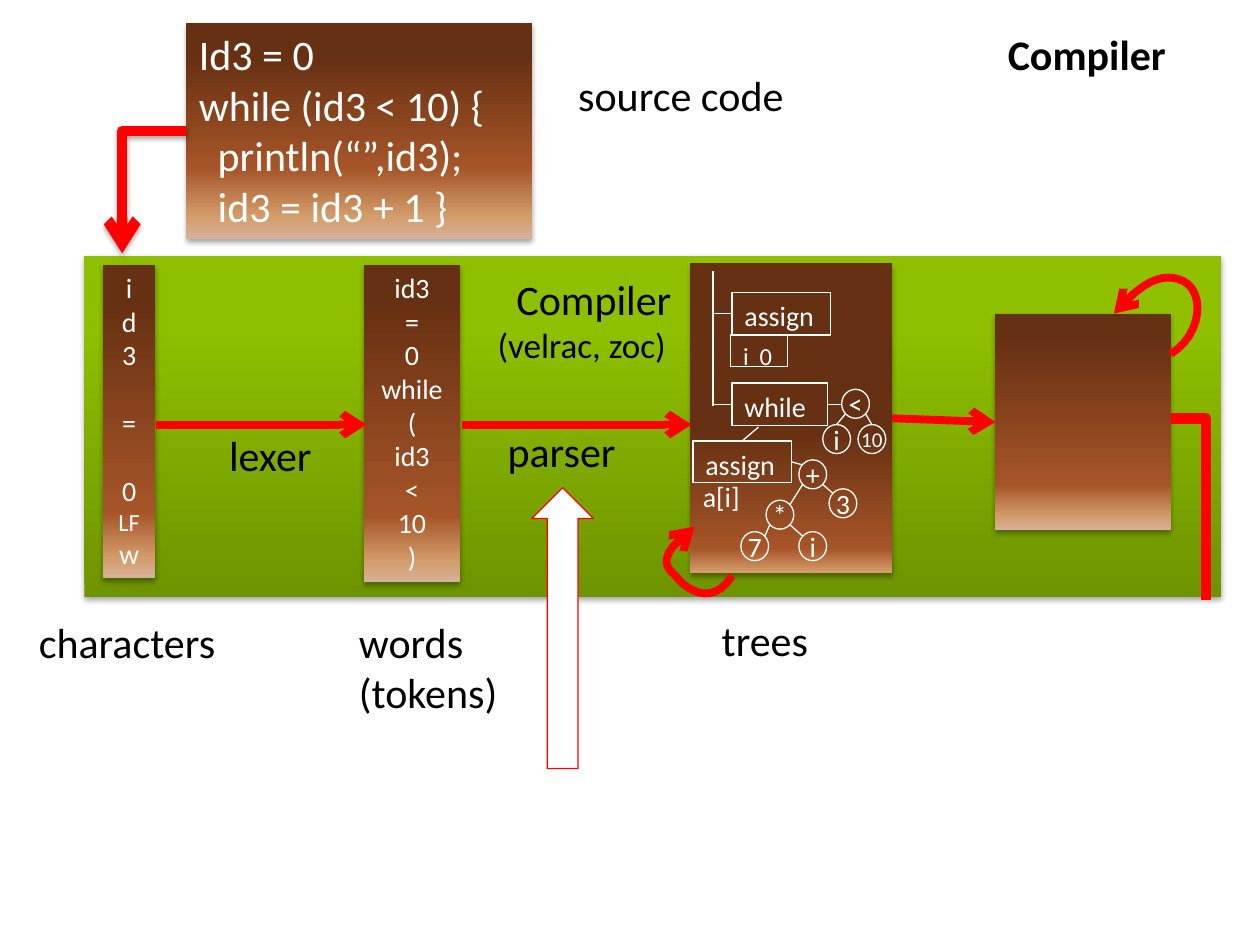
from dataclasses import dataclass

from lxml.etree import SubElement
from pptx import Presentation
from pptx.dml.color import RGBColor
from pptx.enum.shapes import MSO_CONNECTOR as LINK, MSO_SHAPE as SHAPE
from pptx.enum.text import MSO_ANCHOR as ANCHOR, MSO_AUTO_SIZE as FIT, PP_ALIGN as ALIGN
from pptx.oxml.ns import qn
from pptx.util import Inches, Pt

COLUMNS, ROWS = 100, 75
BLACK, WHITE, RED = "000000", "FFFFFF", "FF0000"
GREEN = [(0, "6E9400"), (80, "8FC000"), (100, "90C100")]
LEFT, RIGHT, TOP = 1, 3, 0
NODE_W, NODE_H, NODE_DIAGONAL = 2.2, 2.3, 0.8
STACKED_REACH = 1.8
BLANK_LINE = 19.5


@dataclass
class Line:
    text: str
    size: int = 0
    indent: float = 0
    before: float = 0
    spacing: int = 0


def grid(cells):
    """Length of a number of grid cells, each a tenth of an inch."""
    return Inches(cells / 10)


def rgb(hex_color):
    return RGBColor.from_string(hex_color)


def brown(*stops):
    return list(zip(stops, ("D6B19C", "D49E6C", "A65528", "663012")))


def write(frame, lines, size, color, align=ALIGN.LEFT, bold=False):
    for number, line in enumerate(lines):
        line = line if isinstance(line, Line) else Line(line)
        paragraph = frame.add_paragraph() if number else frame.paragraphs[0]
        paragraph.alignment = align
        if line.before:
            paragraph.space_before = Pt(line.before)
        if line.indent:
            paragraph._p.get_or_add_pPr().set("marL", str(grid(line.indent)))
        run = paragraph.add_run()
        run.text = line.text
        run.font.name = "Calibri"
        run.font.size = Pt(line.size or size)
        run.font.bold = bold
        run.font.color.rgb = rgb(color)
        if line.spacing:
            run._r.get_or_add_rPr().set("spc", str(line.spacing))


def cast_shadow(effects):
    shadow = SubElement(effects, qn("a:outerShdw"), blurRad=str(Pt(3.1)),
                        dist=str(Pt(1.8)), dir="5400000", rotWithShape="0")
    black = SubElement(shadow, qn("a:srgbClr"), val=BLACK)
    SubElement(black, qn("a:alpha"), val="35000")


def add_arrowhead(line):
    SubElement(line._get_or_add_ln(), qn("a:tailEnd"), type="arrow")


def add_figure(slide, kind, box, fill=None, outline=None):
    figure = slide.shapes.add_shape(kind, *map(grid, box))
    figure.shadow.inherit = False
    figure.text_frame.vertical_anchor = ANCHOR.TOP
    if fill:
        figure.fill.solid()
        figure.fill.fore_color.rgb = rgb(fill)
    else:
        figure.fill.background()
    if outline:
        figure.line.color.rgb = rgb(outline)
        figure.line.width = Pt(0.75)
    else:
        figure.line.fill.background()
    return figure


def add_panel(slide, box, stops):
    """Shadowed rectangle whose gradient runs from bottom to top."""
    panel = add_figure(slide, SHAPE.RECTANGLE, box)
    panel.fill.gradient()
    panel.fill.gradient_angle = 90
    stop_list = panel._element.spPr.find(".//" + qn("a:gsLst"))
    for default in list(stop_list):
        stop_list.remove(default)
    for percent, color in stops:
        stop = SubElement(stop_list, qn("a:gs"), pos=str(percent * 1000))
        SubElement(stop, qn("a:srgbClr"), val=color)
    cast_shadow(panel._element.spPr.find(qn("a:effectLst")))
    return panel


def add_label(slide, box, *lines, size=24, color=BLACK, bold=False):
    frame = slide.shapes.add_textbox(*map(grid, box)).text_frame
    frame.word_wrap = False
    frame.auto_size = FIT.SHAPE_TO_FIT_TEXT
    write(frame, lines, size, color, bold=bold)


def add_link(slide, start, end, color=WHITE, width=0.75, bent=False, arrow=False, shadow=False):
    kind = LINK.ELBOW if bent else LINK.STRAIGHT
    link = slide.shapes.add_connector(kind, *map(grid, (*start, *end)))
    link.line.color.rgb = rgb(color)
    link.line.width = Pt(width)
    properties = link._element.spPr
    if bent:
        properties.find(qn("a:prstGeom")).set("prst", "bentConnector2")
    if arrow:
        add_arrowhead(link.line)
    effects = SubElement(properties, qn("a:effectLst"))
    if shadow:
        cast_shadow(effects)
    return link


def add_loop(slide, start, *curves, steps=12):
    """Red arrow along cubic curves, each given as two controls and an end."""
    points, here = [], start
    for curve in curves:
        for step in range(1, steps + 1):
            t = step / steps
            weights = ((1 - t) ** 3, 3 * t * (1 - t) ** 2, 3 * t * t * (1 - t), t ** 3)
            points.append([grid(sum(w * v for w, v in zip(weights, axis)))
                           for axis in zip(here, *curve)])
        here = curve[-1]
    builder = slide.shapes.build_freeform(*map(grid, start))
    builder.add_line_segments(points, close=False)
    loop = builder.convert_to_shape()
    loop.shadow.inherit = False
    loop.fill.background()
    loop.line.color.rgb = rgb(RED)
    loop.line.width = Pt(4.5)
    add_arrowhead(loop.line)


def add_statement(slide, box, line, size=16):
    statement = add_figure(slide, SHAPE.RECTANGLE, box, outline=WHITE)
    statement.text_frame.word_wrap = False
    write(statement.text_frame, [line], size, WHITE)
    return statement


def add_node(slide, center, text, size=16):
    x, y = center
    node = add_figure(slide, SHAPE.OVAL, (x - NODE_W / 2, y - NODE_H / 2, NODE_W, NODE_H),
                      outline=WHITE)
    frame = node.text_frame
    frame.margin_left = frame.margin_right = frame.margin_top = frame.margin_bottom = 0
    frame.vertical_anchor = ANCHOR.MIDDLE
    frame.word_wrap = False
    write(frame, [text], size, WHITE, ALIGN.CENTER)


def add_branch(slide, parent, child):
    """Edge from a parent's lower diagonal to its child's top or upper diagonal."""
    side = NODE_DIAGONAL if child[0] > parent[0] else -NODE_DIAGONAL
    start = parent[0] + side, parent[1] + NODE_DIAGONAL
    if abs(child[0] - parent[0]) < STACKED_REACH:
        end = child[0], child[1] - NODE_H / 2
    else:
        end = child[0] - side, child[1] - NODE_DIAGONAL
    add_link(slide, start, end)


def add_tree(slide):
    assign = add_statement(slide, (58.1, 23.2, 7.8, 3.4), "assign")
    loop = add_statement(slide, (58.1, 30.4, 7.6, 3.4), "while")
    add_statement(slide, (58, 26.6, 4.5, 2.5), Line("i 0", spacing=150), 14)
    body = add_statement(slide, (55, 35, 7.8, 3.3), "assign")
    add_label(slide, (54.8, 37.6, 5, 3.7), "a[i]", size=16, color=WHITE)

    add_link(slide, (56.6, 21.5), (56.6, 32.2))
    for statement, side, start, end in (
            (assign, LEFT, (58.1, 24.9), (56.6, 24.9)), (loop, LEFT, (58.1, 32.1), (56.6, 32.1)),
            (loop, RIGHT, (65.7, 32.1), (66.8, 32.1)), (body, TOP, (58.9, 35), (60.2, 33.9)),
            (body, RIGHT, (62.8, 36.6), (63.7, 36.9))):
        add_link(slide, start, end).begin_connect(statement, side)

    less, index, limit = (67.9, 32.05), (66.4, 34.85), (69.2, 34.85)
    plus, times, three = (64.5, 37.65), (61.9, 40.85), (66.9, 39.95)
    seven, factor = (59.9, 43.35), (64.5, 43.35)
    for center, text in ((less, "<"), (index, "i"), (plus, "+"), (times, "*"),
                         (three, "3"), (seven, "7"), (factor, "i")):
        add_node(slide, center, text)
    add_node(slide, limit, "10", 12)
    for parent, children in ((less, (index, limit)), (plus, (times, three)),
                             (times, (seven, factor))):
        for child in children:
            add_branch(slide, parent, child)


def add_stages(slide):
    compiler = add_panel(slide, (6.7, 20.3, 90.2, 27.1), GREEN).text_frame
    compiler.margin_top = grid(1.4)
    write(compiler, [Line("Compiler", 24, 33.3), Line("(velrac, zoc)", 20, 31.8)], 24, BLACK)

    source = add_panel(slide, (14.8, 1.8, 27.4, 17.2), brown(0, 10, 33, 85)).text_frame
    write(source, ["Id3 = 0", "while (id3 < 10) {", Line("println(“”,id3);", indent=1.5),
                   Line("id3 = id3 + 1 }", indent=1.5)], 24, WHITE)

    stage = brown(0, 6, 21, 89)
    characters = add_panel(slide, (8.2, 21, 4.1, 24.9), stage).text_frame
    write(characters, ["i", "d", "3", Line("=", before=BLANK_LINE),
                       Line("0", before=BLANK_LINE), Line("LF", 14), "w"],
          16, WHITE, ALIGN.CENTER)
    tokens = add_panel(slide, (28.9, 21, 7.6, 25.2), stage).text_frame
    write(tokens, ["id3", "=", "0", "while", "(", "id3", "<", "10", ")"],
          16, WHITE, ALIGN.CENTER)

    trees = add_panel(slide, (54.8, 20.9, 16, 24.6), brown(0, 0, 8, 46))
    add_tree(slide)
    output = add_panel(slide, (79, 24.9, 13.9, 17.2), stage)
    generate = add_link(slide, (70.8, 33.2), (79, 33.4), RED, 4.5, arrow=True)
    generate.begin_connect(trees, RIGHT)
    generate.end_connect(output, LEFT)


def add_flow(slide):
    add_link(slide, (14.8, 10.4), (9.7, 20.1), RED, 6, bent=True, arrow=True, shadow=True)
    add_link(slide, (92.9, 33.2), (95.7, 47.6), RED, 6, bent=True)
    for start, end in ((12.4, 29.1), (36.7, 54.9)):
        add_link(slide, (start, 33.7), (end, 33.7), RED, 4.5, arrow=True)
    add_loop(slide, (92.9, 28.1), ((95.5, 26.5), (95.6, 23.1), (93.9, 22.3)),
             ((92.2, 21.5), (90.5, 22.5), (88.4, 24.9)))
    add_loop(slide, (58.1, 45.7), ((56.4, 48.4), (54.2, 46.5), (53.7, 45.8)),
             ((53.2, 45.2), (51.6, 44.5), (55.1, 41.8)))
    add_figure(slide, SHAPE.UP_ARROW, (42.2, 38.7, 4.9, 22.3), WHITE, RED)


def main():
    deck = Presentation()
    deck.slide_width, deck.slide_height = grid(COLUMNS), grid(ROWS)
    slide = deck.slides.add_slide(deck.slide_layouts[6])
    add_stages(slide)
    add_flow(slide)
    add_label(slide, (79, 1.8, 18, 5), "Compiler", bold=True)
    add_label(slide, (44.9, 5, 18.5, 5), "source code")
    add_label(slide, (17.2, 33.6, 8.6, 5), "lexer")
    add_label(slide, (39.3, 33.3, 10.7, 5), "parser")
    add_label(slide, (2.1, 48.4, 16.2, 5), "characters")
    add_label(slide, (27.5, 48.4, 13.1, 9.1), "words", "(tokens)")
    add_label(slide, (56.3, 48.3, 9, 5), "trees")
    deck.save("out.pptx")


if __name__ == "__main__":
    main()
